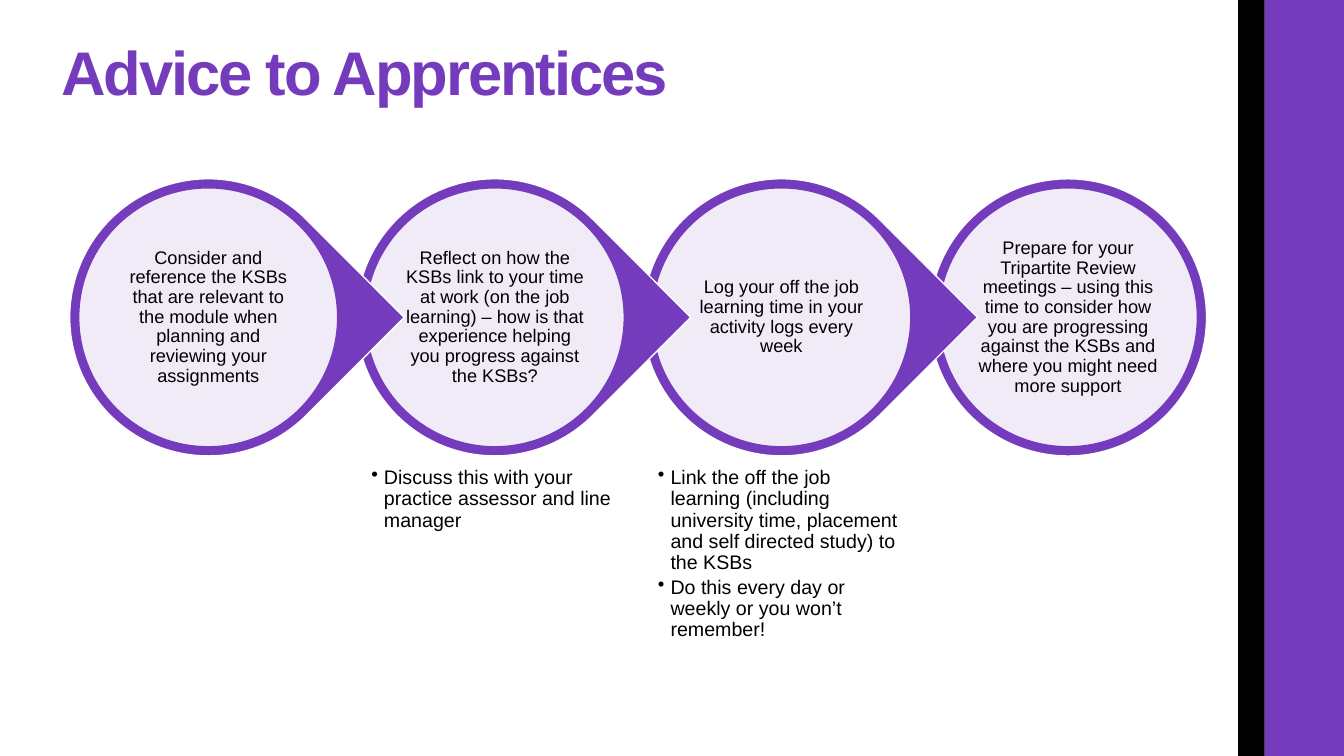
from pptx import Presentation
from pptx.dml.color import RGBColor
from pptx.enum.shapes import MSO_SHAPE as Shape
from pptx.enum.text import MSO_ANCHOR as Anchor, PP_ALIGN as Align
from pptx.oxml.ns import qn
from pptx.util import Pt
from lxml.etree import SubElement

COLORS = {"purple": "753BBD", "black": "000000", "white": "FFFFFF"}

deck = Presentation()
deck.slide_width, deck.slide_height = Pt(960), Pt(540)
page = deck.slides.add_slide(deck.slide_layouts[6])


def add_filled(kind, left, top, width, height, fill, line=None):
    shape = page.shapes.add_shape(kind, Pt(left), Pt(top), Pt(width), Pt(height))
    shape.shadow.inherit = False
    shape.fill.solid()
    shape.fill.fore_color.rgb = RGBColor.from_string(COLORS[fill])
    if line:
        shape.line.color.rgb = RGBColor.from_string(COLORS[line])
        shape.line.width = Pt(1)
    else:
        shape.line.fill.background()
    return shape


def add_text(left, top, width, height, lines, size, color, inset, anchor, align):
    box = page.shapes.add_textbox(Pt(left), Pt(top), Pt(width), Pt(height))
    frame = box.text_frame
    frame.word_wrap = True
    frame.vertical_anchor = anchor
    frame.margin_left = frame.margin_right = Pt(inset)
    frame.margin_top = frame.margin_bottom = Pt(inset)
    frame.text = "\n".join(lines)
    for para in frame.paragraphs:
        para.alignment = align
        para.line_spacing = 0.9
        for span in para.runs:
            span.font.name = "Arial"
            span.font.size = Pt(size)
            span.font.color.rgb = RGBColor.from_string(COLORS[color])
    return frame


# Side bars
add_filled(Shape.RECTANGLE, 903.3, 0, 56.7, 540, "purple")
add_filled(Shape.RECTANGLE, 884.4, 0, 18.9, 540, "black")

# Title
title = add_text(43.9, 25.2, 808, 52.6, ["Advice to Apprentices"], 44, "purple",
                 0, Anchor.BOTTOM, Align.LEFT)
title_span = title.paragraphs[0].runs[0]
title_span.font.bold = True
title_span.font._element.set("spc", "-150")

# Steps: text in the circle, bullets below it
steps = [
    ("Consider and reference the KSBs that are relevant to the module when "
     "planning and reviewing your assignments", []),
    ("Reflect on how the KSBs link to your time at work (on the job learning) – "
     "how is that experience helping you progress against the KSBs?",
     ["Discuss this with your practice assessor and line manager"]),
    ("Log your off the job learning time in your activity logs every week",
     ["Link the off the job learning (including university time, placement and "
      "self directed study) to the KSBs",
      "Do this every day or weekly or you won’t remember!"]),
    ("Prepare for your Tripartite Review meetings – using this time to consider "
     "how you are progressing against the KSBs and where you might need more "
     "support", []),
]
FIRST_CENTER, STEP, MIDDLE = 148.75, 204.7, 226.7
OUTER, INNER, TEXT = 198, 185, 132.2

# Drawn from right to left, so that each point overlaps the next circle
for index, (message, bullets) in reversed(list(enumerate(steps))):
    center = FIRST_CENTER + index * STEP
    is_last = index == len(steps) - 1
    outer = add_filled(Shape.OVAL if is_last else Shape.TEAR, center - OUTER / 2,
                       MIDDLE - OUTER / 2, OUTER, OUTER, "purple", "white")
    if not is_last:
        outer.adjustments[0] = 1
        outer.rotation = 45

    inner = add_filled(Shape.OVAL, center - INNER / 2, MIDDLE - INNER / 2,
                       INNER, INNER, "white", "purple")
    fill_color = inner._element.spPr.find(qn("a:solidFill"))[0]
    SubElement(fill_color, qn("a:alpha"), val="90000")

    add_text(center - TEXT / 2, MIDDLE - TEXT / 2, TEXT, TEXT, [message], 13,
             "black", 1.3, Anchor.MIDDLE, Align.CENTER)

    if bullets:
        notes = add_text(center - INNER / 2, 329.8, INNER, 108.7, bullets, 14,
                         "black", 4.3, Anchor.TOP, Align.LEFT)
        for para in notes.paragraphs:
            para.space_after = Pt(2.5)
            props = para._p.get_or_add_pPr()
            props.set("marL", str(Pt(9)))
            props.set("indent", str(Pt(-9)))
            SubElement(props, qn("a:buChar"), char="•")

deck.save("out.pptx")
